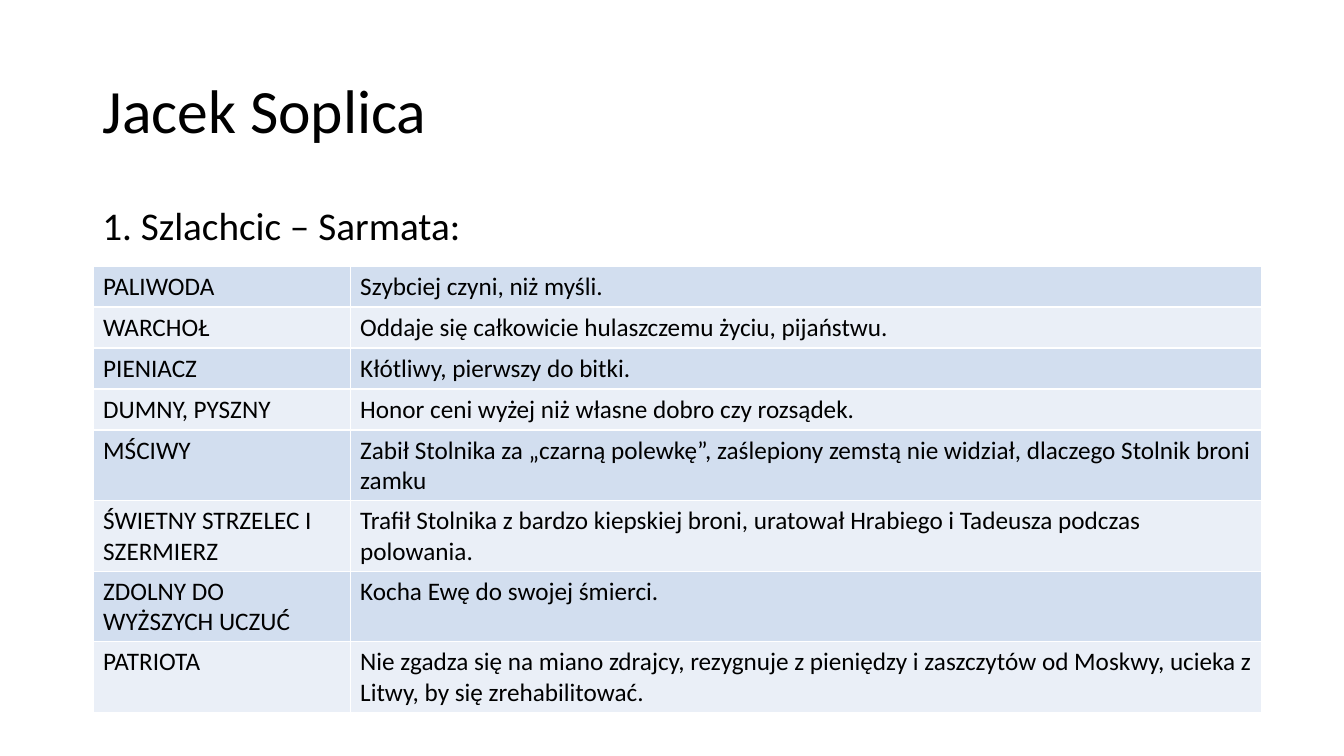
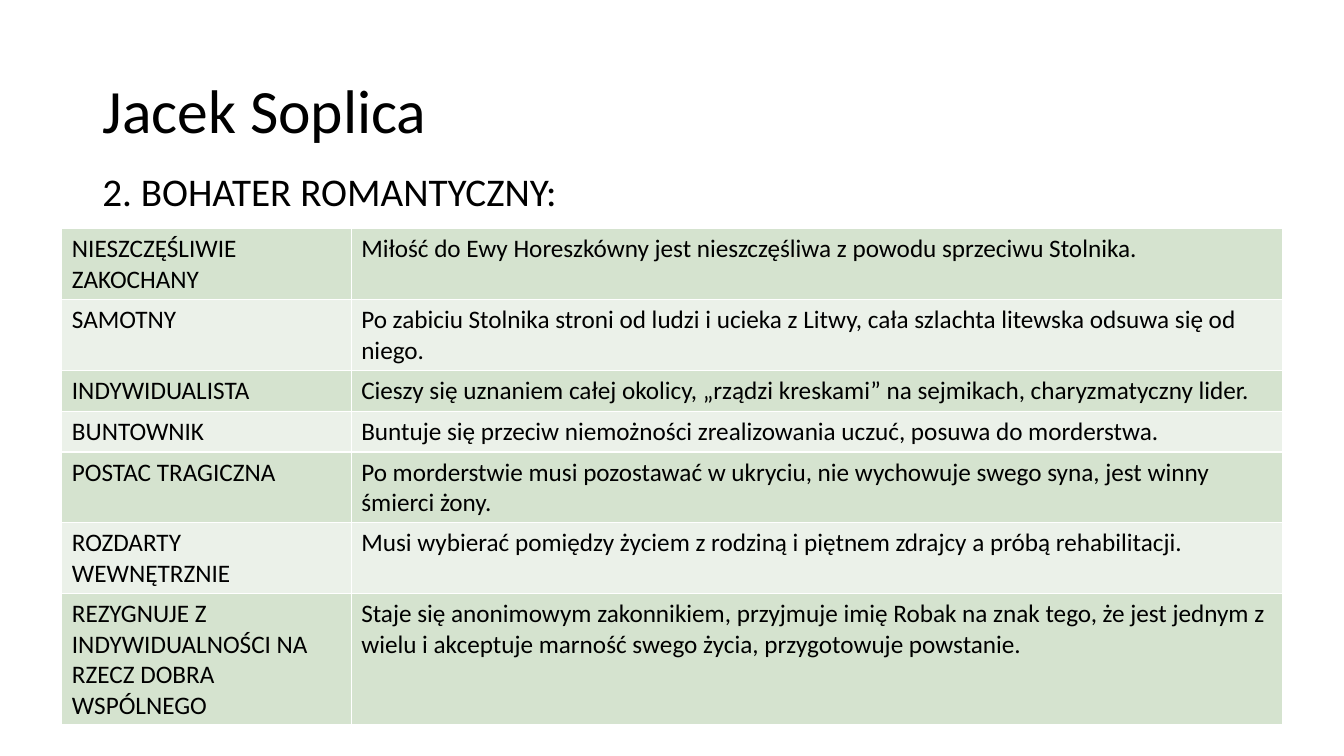
from lxml import etree
from pptx import Presentation
from pptx.dml.color import RGBColor
from pptx.enum.text import MSO_ANCHOR, MSO_AUTO_SIZE, PP_ALIGN
from pptx.oxml.ns import qn
from pptx.util import Pt

LEFT = PP_ALIGN.LEFT
TOP, MIDDLE = MSO_ANCHOR.TOP, MSO_ANCHOR.MIDDLE
NO_FIT = MSO_AUTO_SIZE.NONE

COLORS = {
    "text": "000000",
    "border": "FFFFFF",
    "blue": "D2DEEF",
    "pale blue": "EAEFF7",
    "green": "D5E3CF",
    "pale green": "EBF1E9",
}
FONT = "Calibri"
TITLE = "Jacek Soplica"
TEXT_LEFT, TEXT_WIDTH = 66, 828
TITLE_TOP, TITLE_HEIGHT = 28.75, 104.4
ROW_HEIGHT = 29.3
TITLE_FORMAT = {"alignment": LEFT, "line_spacing": 0.9, "space_before": Pt(0)}
HEADING_FORMAT = {"alignment": LEFT, "line_spacing": 0.9, "space_before": Pt(10)}
CELL_FORMAT = {"alignment": LEFT}

SLIDES = [
    {
        "heading": "1. Szlachcic – Sarmata:",
        "heading_top": 144,
        "table_left": 66.5,
        "table_top": 190,
        "columns": (183.6, 651.4),
        "bands": ("blue", "pale blue"),
        "rows": [
            ("PALIWODA", "Szybciej czyni, niż myśli."),
            ("WARCHOŁ", "Oddaje się całkowicie hulaszczemu życiu, pijaństwu."),
            ("PIENIACZ", "Kłótliwy, pierwszy do bitki."),
            ("DUMNY, PYSZNY", "Honor ceni wyżej niż własne dobro czy rozsądek."),
            ("MŚCIWY", "Zabił Stolnika za „czarną polewkę”, zaślepiony zemstą "
                       "nie widział, dlaczego Stolnik broni zamku"),
            ("ŚWIETNY STRZELEC I SZERMIERZ",
             "Trafił Stolnika z bardzo kiepskiej broni, uratował Hrabiego "
             "i Tadeusza podczas polowania."),
            ("ZDOLNY DO WYŻSZYCH UCZUĆ", "Kocha Ewę do swojej śmierci."),
            ("PATRIOTA", "Nie zgadza się na miano zdrajcy, rezygnuje z pieniędzy "
                         "i zaszczytów od Moskwy, ucieka z Litwy, by się zrehabilitować."),
        ],
    },
    {
        "heading": "2. BOHATER ROMANTYCZNY:",
        "heading_top": 119.5,
        "table_left": 44.2,
        "table_top": 163.5,
        "columns": (206.7, 665.2),
        "bands": ("green", "pale green"),
        "rows": [
            ("NIESZCZĘŚLIWIE ZAKOCHANY",
             "Miłość do Ewy Horeszkówny jest nieszczęśliwa z powodu sprzeciwu Stolnika."),
            ("SAMOTNY", "Po zabiciu Stolnika stroni od ludzi i ucieka z Litwy, "
                        "cała szlachta litewska odsuwa się od niego."),
            ("INDYWIDUALISTA", "Cieszy się uznaniem całej okolicy, „rządzi kreskami” "
                               "na sejmikach, charyzmatyczny lider."),
            ("BUNTOWNIK", "Buntuje się przeciw niemożności zrealizowania uczuć, "
                          "posuwa do morderstwa."),
            ("POSTAC TRAGICZNA", "Po morderstwie musi pozostawać w ukryciu, nie wychowuje "
                                 "swego syna, jest winny śmierci żony."),
            ("ROZDARTY WEWNĘTRZNIE", "Musi wybierać pomiędzy życiem z rodziną i piętnem "
                                     "zdrajcy a próbą rehabilitacji."),
            ("REZYGNUJE Z INDYWIDUALNOŚCI NA RZECZ DOBRA WSPÓLNEGO",
             "Staje się anonimowym zakonnikiem, przyjmuje imię Robak na znak tego, "
             "że jest jednym z wielu i akceptuje marność swego życia, "
             "przygotowuje powstanie."),
        ],
    },
]


def color(name):
    return RGBColor.from_string(COLORS[name])


def set_all(target, values):
    for name, value in values.items():
        setattr(target, name, value)


def write(frame, text, size, para_format):
    para = frame.paragraphs[0]
    set_all(para, para_format)
    span = para.add_run()
    span.text = text
    set_all(span.font, {"name": FONT, "size": Pt(size), "bold": False})
    span.font.color.rgb = color("text")


def add_borders(cell):
    properties = cell._tc.get_or_add_tcPr()
    for side in ("lnL", "lnR", "lnT", "lnB"):
        line = etree.SubElement(properties, qn(f"a:{side}"), w=str(Pt(1)))
        fill = etree.SubElement(line, qn("a:solidFill"))
        etree.SubElement(fill, qn("a:srgbClr"), val=COLORS["border"])


def add_title(page):
    title = page.shapes.title
    set_all(title, {"left": Pt(TEXT_LEFT), "top": Pt(TITLE_TOP),
                    "width": Pt(TEXT_WIDTH), "height": Pt(TITLE_HEIGHT)})
    set_all(title.text_frame, {"vertical_anchor": MIDDLE, "auto_size": NO_FIT})
    write(title.text_frame, TITLE, 44, TITLE_FORMAT)


def add_heading(page, content):
    top = content["heading_top"]
    box = page.shapes.add_textbox(Pt(TEXT_LEFT), Pt(top), Pt(TEXT_WIDTH),
                                  Pt(content["table_top"] - top))
    set_all(box.text_frame, {"word_wrap": True, "vertical_anchor": TOP})
    write(box.text_frame, content["heading"], 28, HEADING_FORMAT)


def add_traits(page, content):
    rows, columns = content["rows"], content["columns"]
    table = page.shapes.add_table(
        len(rows), len(columns), Pt(content["table_left"]), Pt(content["table_top"]),
        Pt(sum(columns)), Pt(ROW_HEIGHT * len(rows))).table
    set_all(table, {"first_row": False, "horz_banding": False})
    for column, width in zip(table.columns, columns):
        column.width = Pt(width)
    for index, texts in enumerate(rows):
        table.rows[index].height = Pt(ROW_HEIGHT)
        for cell, text in zip(table.rows[index].cells, texts):
            add_borders(cell)
            cell.fill.solid()
            cell.fill.fore_color.rgb = color(content["bands"][index % 2])
            write(cell.text_frame, text, 18, CELL_FORMAT)


def main():
    deck = Presentation()
    set_all(deck, {"slide_width": Pt(960), "slide_height": Pt(540)})
    title_only = deck.slide_layouts.get_by_name("Title Only")
    for content in SLIDES:
        page = deck.slides.add_slide(title_only)
        add_title(page)
        add_heading(page, content)
        add_traits(page, content)
    deck.save("out.pptx")


if __name__ == "__main__":
    main()
